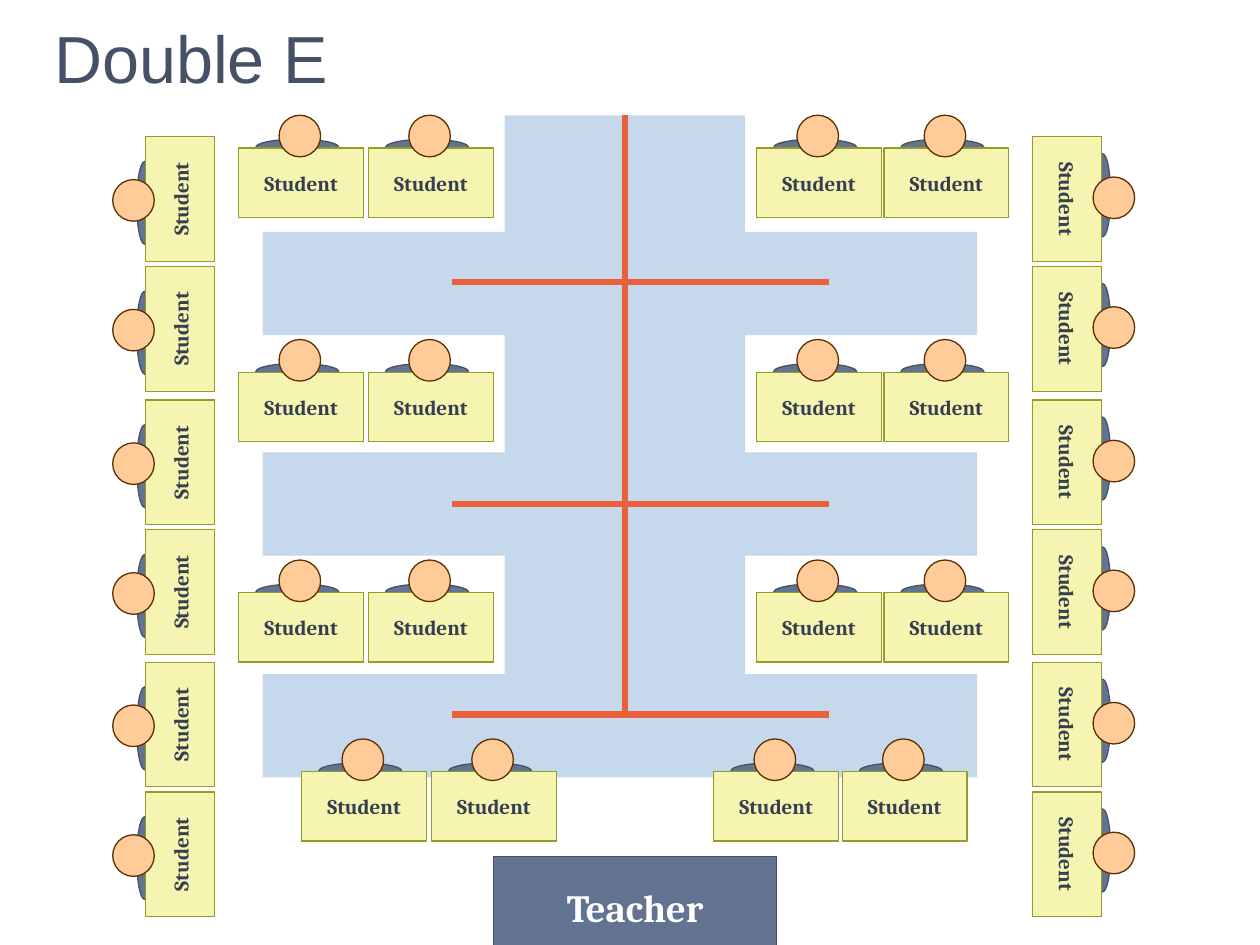
from lxml.etree import SubElement
from pptx import Presentation
from pptx.dml.color import RGBColor
from pptx.enum.shapes import MSO_CONNECTOR as LINK, MSO_SHAPE as SHAPE
from pptx.enum.text import MSO_ANCHOR as ANCHOR, PP_ALIGN as ALIGN
from pptx.oxml.ns import qn
from pptx.util import Inches, Pt

FLOOR = RGBColor(0xC6, 0xD9, 0xEC)
ROUTE = RGBColor(0xEA, 0x60, 0x3A)
SLATE = RGBColor(0x63, 0x74, 0x92)
NAVY = RGBColor(0x45, 0x51, 0x67)
INK = RGBColor(0x36, 0x3F, 0x50)
DESK = RGBColor(0xF5, 0xF5, 0xB1)
OLIVE = RGBColor(0x95, 0x9B, 0x25)
SKIN = RGBColor(0xFF, 0xCC, 0x99)
BROWN = RGBColor(0x5C, 0x2E, 0x00)
WHITE = RGBColor(0xFF, 0xFF, 0xFF)


def put(home, kind, x, y, w, h, fill, edge=None, turn=0):
    """Add a shape centred on x, y."""
    shape = home.shapes.add_shape(
        kind, Inches(x - w / 2), Inches(y - h / 2), Inches(w), Inches(h))
    shape.shadow.inherit = False
    shape.rotation = turn
    shape.fill.solid()
    shape.fill.fore_color.rgb = fill
    if edge is None:
        shape.line.fill.background()
    else:
        shape.line.color.rgb = edge
        shape.line.width = Pt(0.75)
    return shape


def write(shape, text, size, color, font="Cambria", bold=True,
          align=ALIGN.CENTER, wrap=True):
    frame = shape.text_frame
    frame.word_wrap = wrap
    frame.vertical_anchor = ANCHOR.MIDDLE
    para = frame.paragraphs[0]
    para.alignment = align
    run = para.add_run()
    run.text = text
    run.font.size = Pt(size)
    run.font.name = font
    run.font.bold = bold
    run.font.color.rgb = color


deck = Presentation()
deck.slide_width, deck.slide_height = Inches(10), Inches(7.5)
slide = deck.slides.add_slide(deck.slide_layouts[5])

title = slide.shapes.title
title.left, title.top = Inches(0.33), Inches(-0.17)
title.width, title.height = Inches(9), Inches(1.25)
write(title, "Double E", 38, NAVY, font="Arial", bold=False, align=ALIGN.LEFT)

# Walking area and the teacher's route through it
aisle = put(slide, SHAPE.RECTANGLE, 4.96, 3.54, 1.91, 5.25, FLOOR)
for y in (2.25, 4, 5.76):
    put(slide, SHAPE.RECTANGLE, 4.92, y, 0.82, 5.67, FLOOR, turn=270)

routes = [(4.96, 0.92, 4.96, 5.67)]
routes += [(3.59, y, 6.58, y) for y in (2.24, 4, 5.67)]
for n, ends in enumerate(routes):
    line = slide.shapes.add_connector(LINK.STRAIGHT, *map(Inches, ends))
    line.line.color.rgb = ROUTE
    line.line.width = Pt(3.75)
    SubElement(line._element.spPr, qn("a:effectLst"))
    if n == 0:
        line.begin_connect(aisle, 0)

teacher = put(slide, SHAPE.RECTANGLE, 5.04, 7.15, 2.25, 0.71, SLATE, NAVY)
write(teacher, "Teacher", 22, WHITE)
frame = teacher.text_frame
frame.margin_left = frame.margin_right = frame.margin_bottom = Inches(0.04)
frame.margin_top = Inches(0.14)

# Seats as (group, x, y, turn): pairs in the middle, a column on each side
inner, front = (2.39, 3.42, 6.5, 7.51), (2.89, 3.92, 6.16, 7.18)
rows = [(1.45, inner), (3.23, inner), (4.98, inner), (6.4, front)]
seats = [(slide.shapes.add_group_shape(), x, y, 0)
         for y, row in rows for x in row]
for x, turn in ((1.43, 270), (8.47, 90)):
    group = slide.shapes.add_group_shape()
    seats += [(group, x, top + step, turn)
              for top in (1.58, 3.67, 5.75) for step in (0, 1.03)]

# Unit vector from each desk to its student, by turn
FACING = {0: (0, -1), 90: (1, 0), 270: (-1, 0)}
for group, x, y, turn in seats:
    dx, dy = FACING[turn]
    # "back" is the distance behind the desk, "side" a small sideways shift
    back, side = 0.28, 0.03
    put(group, SHAPE.OVAL, x + back * dx + side * dy, y + back * dy - side * dx,
        0.66, 0.13, SLATE, NAVY, turn)
    desk = put(group, SHAPE.RECTANGLE, x, y, 0.99, 0.55, DESK, OLIVE, turn)
    write(desk, "Student", 12, INK, wrap=False)
    back, side = 0.37, 0.01
    put(group, SHAPE.OVAL, x + back * dx + side * dy, y + back * dy - side * dx,
        0.33, 0.33, SKIN, BROWN, turn)

deck.save("out.pptx")
